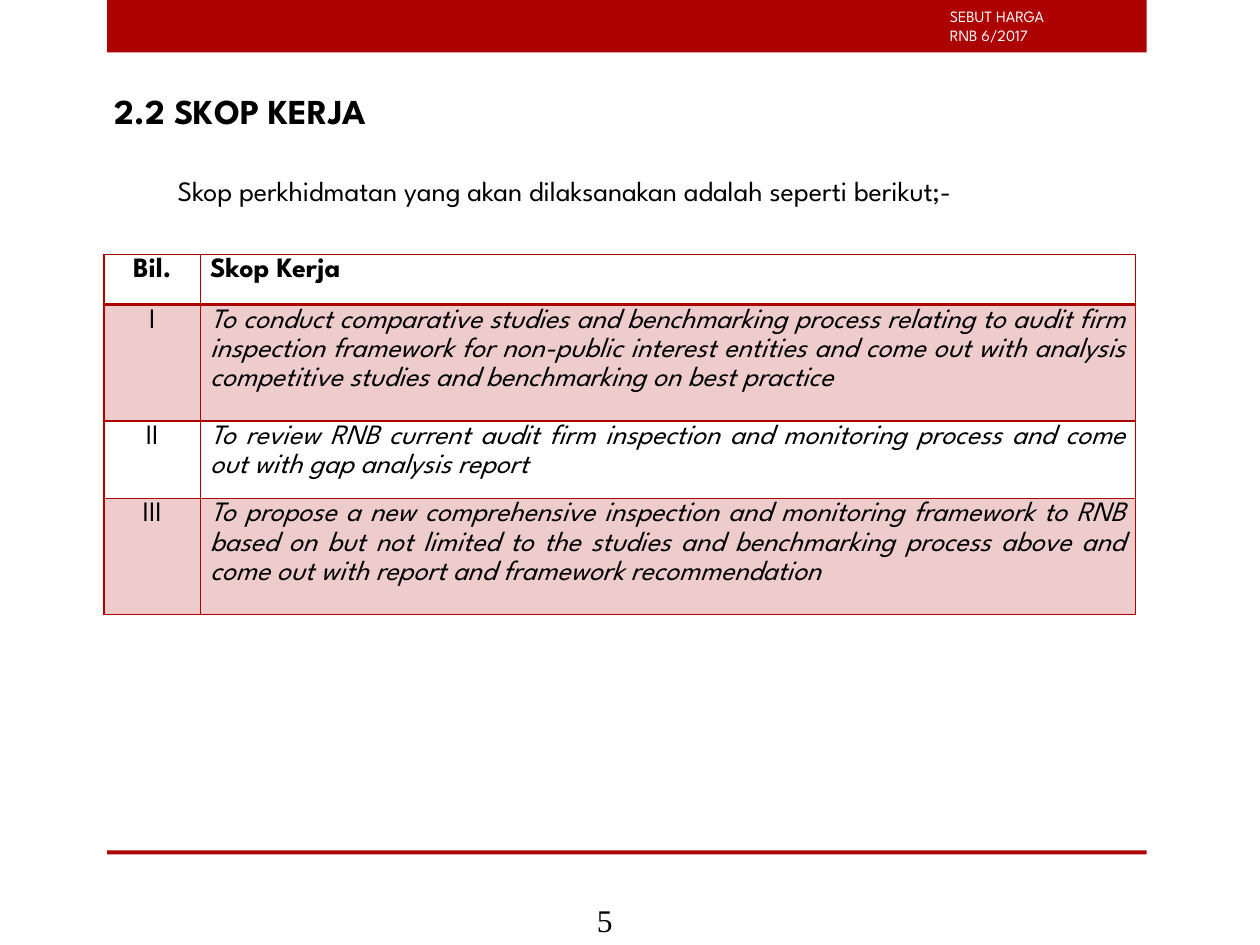
from lxml.etree import SubElement
from pptx import Presentation
from pptx.dml.color import RGBColor
from pptx.enum.shapes import MSO_SHAPE
from pptx.enum.text import MSO_ANCHOR, PP_ALIGN as Align
from pptx.oxml.ns import qn
from pptx.util import Pt

COLORS = {"red": "AD0101", "white": "FFFFFF", "black": "000000"}
SANS, SERIF = "League Spartan", "Times New Roman"

HEADER = ["SEBUT HARGA", "RNB 6/2017"]
TITLE = "2.2 SKOP KERJA"
INTRO = "Skop perkhidmatan yang akan dilaksanakan adalah seperti berikut;-"
PAGE_NUMBER = "5"
ROWS = [
    ("Bil.", "Skop Kerja"),
    ("I", "To conduct comparative studies and benchmarking process relating to audit firm "
          "inspection framework for non-public interest entities and come out with analysis "
          "competitive studies and benchmarking on best practice"),
    ("II", "To review RNB current audit firm inspection and monitoring process and come "
           "out with gap analysis report"),
    ("III", "To propose a new comprehensive inspection and monitoring framework to RNB "
            "based on but not limited to the studies and benchmarking process above and "
            "come out with report and framework recommendation"),
]
COLUMN_WIDTHS = [55.4, 534.2]
ROW_HEIGHTS = [28.8, 66.5, 44, 66.5]
BARS = [(61.2, 0, 594, 30), (61.2, 486, 594, 2.2)]


def color(name):
    return RGBColor.from_string(COLORS[name])


def points(*lengths):
    return [Pt(length) for length in lengths]


def style(para, size, face=SANS, ink="black", bold=False, italic=False):
    font = para.font
    font.name, font.size, font.bold, font.italic = face, Pt(size), bold, italic
    font.color.rgb = color(ink)


def place(shape, left, top, width, height):
    shape.left, shape.top, shape.width, shape.height = points(left, top, width, height)
    shape.text_frame.vertical_anchor = MSO_ANCHOR.TOP
    shape.text_frame.word_wrap = True


def add_bar(page, bounds):
    bar = page.shapes.add_shape(MSO_SHAPE.RECTANGLE, *points(*bounds))
    bar.shadow.inherit = False
    bar.fill.solid()
    bar.fill.fore_color.rgb = color("red")
    bar.line.fill.background()


def add_lines(page, bounds, lines, size, spacing=None, **look):
    box = page.shapes.add_textbox(*points(*bounds))
    frame = box.text_frame
    frame.word_wrap = True
    frame.text = "\n".join(lines)
    for para in frame.paragraphs:
        style(para, size, **look)
        para.line_spacing = spacing


def add_border(cell, side, width):
    line = SubElement(cell._tc.get_or_add_tcPr(), qn("a:ln" + side), w=str(Pt(width)))
    fill = SubElement(line, qn("a:solidFill"))
    SubElement(fill, qn("a:srgbClr"), val=COLORS["red"])


def tint(cell, percent):
    """Fill the cell with translucent red."""
    cell.fill.solid()
    cell.fill.fore_color.rgb = color("red")
    value = cell._tc.tcPr.find(qn("a:solidFill")).find(qn("a:srgbClr"))
    SubElement(value, qn("a:alpha"), val=str(percent * 1000))


def format_cell(cell, text, row, column):
    cell.margin_left = cell.margin_right = Pt(5.4)
    cell.margin_top = cell.margin_bottom = 0
    cell.text = text
    para = cell.text_frame.paragraphs[0]
    para.alignment = Align.JUSTIFY if column else Align.CENTER
    para.line_spacing = 1.15
    style(para, 16, bold=row == 0, italic=row > 0 and column == 1)
    for side in "LRTB":
        under_heading = (row, side) in [(0, "B"), (1, "T")]
        add_border(cell, side, 2 if under_heading else 1)
    if row % 2:
        tint(cell, 20)
    else:
        cell.fill.background()


def add_scope_table(page):
    bounds = points(59.3, 145.3, sum(COLUMN_WIDTHS), sum(ROW_HEIGHTS))
    table = page.shapes.add_table(len(ROWS), len(COLUMN_WIDTHS), *bounds).table
    table.first_row = table.horz_banding = False
    for column, width in zip(table.columns, COLUMN_WIDTHS):
        column.width = Pt(width)
    for row, height in zip(table.rows, ROW_HEIGHTS):
        row.height = Pt(height)
    for row, texts in enumerate(ROWS):
        for column, text in enumerate(texts):
            format_cell(table.cell(row, column), text, row, column)


def add_heading(page):
    title, body = page.placeholders
    place(title, 58.3, 47.5, 646.6, 28)
    title.text_frame.text = TITLE
    para = title.text_frame.paragraphs[0]
    para.alignment = Align.LEFT
    style(para, 20, bold=True)

    place(body, 58.3, 95.5, 646.6, 24)
    body.text_frame.text = INTRO
    para = body.text_frame.paragraphs[0]
    para.space_before = Pt(0)
    style(para, 16)
    properties = para._p.get_or_add_pPr()
    properties.set("marL", str(Pt(36)))
    properties.set("indent", "0")
    SubElement(properties, qn("a:buNone"))


def main():
    deck = Presentation()
    deck.slide_width, deck.slide_height = points(720, 540)
    page = deck.slides.add_slide(deck.slide_layouts[1])
    for bounds in BARS:
        add_bar(page, bounds)
    add_lines(page, (535.7, 0.4, 145.4, 28.8), HEADER, 9, spacing=Pt(10.8), ink="white")
    add_heading(page)
    add_scope_table(page)
    add_lines(page, (334, 511.2, 59.8, 28.8), [PAGE_NUMBER], 18, face=SERIF)
    deck.save("out.pptx")


if __name__ == "__main__":
    main()
